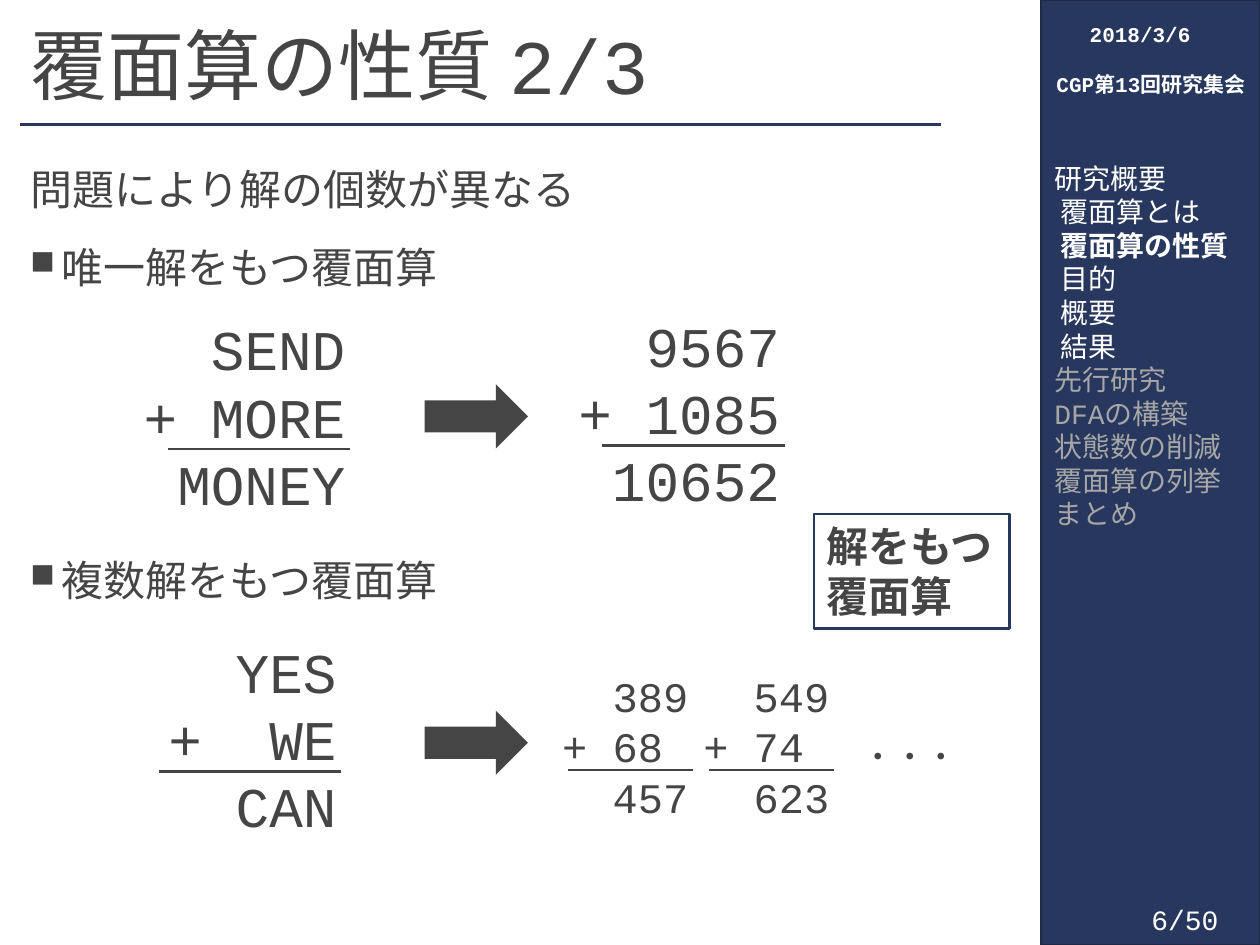
from dataclasses import dataclass
from typing import NamedTuple

from lxml.etree import SubElement
from pptx import Presentation
from pptx.dml.color import RGBColor
from pptx.enum.shapes import MSO_CONNECTOR as CONN, MSO_SHAPE as SHAPE
from pptx.enum.text import MSO_ANCHOR as ANCHOR, PP_ALIGN as ALIGN
from pptx.oxml.ns import qn
from pptx.util import Inches, Pt

COLS, ROWS = 100, 75


@dataclass(frozen=True)
class Theme:
    font: str = "Courier New"
    ink: str = "454545"
    navy: str = "27375D"
    edge: str = "1D2945"
    white: str = "FFFFFF"
    faded: str = "A6A6A6"
    title: int = 44
    large: int = 32
    body: int = 24
    dots: int = 18
    menu: int = 16
    small: int = 12
    rule: float = 1.5


T = Theme()


class Box(NamedTuple):
    col: float
    row: float
    cols: float
    rows: float


class Rule(NamedTuple):
    dx: float
    dy: float
    length: float


@dataclass(frozen=True)
class Sum:
    col: float
    row: float
    size: int
    lines: tuple[str, str, str]


@dataclass(frozen=True)
class Item:
    text: str
    bold: bool = False
    color: str = T.white


@dataclass(frozen=True)
class Point:
    text: str
    before: float = 10
    bullet: bool = True


SUM_RULES = {T.large: Rule(3.4, 11.15, 14.5), T.body: Rule(8, 8.4, 9.9)}
SUM_HEIGHTS = {T.large: 17.2, T.body: 13.1}
SUMS = [
    Sum(9.9, 24.5, T.large, ("SEND", "+ MORE", "MONEY")),
    Sum(44.4, 24.2, T.large, ("9567", "+ 1085", "10652")),
    Sum(9.2, 50.1, T.large, ("YES", "+  WE", "CAN")),
    Sum(37.1, 52.7, T.body, ("389", "+ 68 ", "457")),
    Sum(48.3, 52.7, T.body, ("549", "+ 74 ", "623")),
]
ARROW_ROWS = (30.5, 56.4)
POINTS = [
    Point("問題により解の個数が異なる", bullet=False),
    Point("唯一解をもつ覆面算"),
    Point("複数解をもつ覆面算", before=144),
]
MENU = [
    Item("研究概要"),
    Item(" 覆面算とは"),
    Item(" 覆面算の性質", bold=True),
    Item(" 目的"),
    Item(" 概要"),
    Item(" 結果"),
    *(Item(t, color=T.faded) for t in
      ("先行研究", "DFAの構築", "状態数の削減", "覆面算の列挙", "まとめ")),
]

prs = Presentation()
prs.slide_width, prs.slide_height = Inches(10), Inches(7.5)
s = prs.slides.add_slide(prs.slide_layouts[6])


def x(cols: float) -> int:
    return round(prs.slide_width * cols / COLS)


def y(rows: float) -> int:
    return round(prs.slide_height * rows / ROWS)


def place(box: Box) -> tuple[int, int, int, int]:
    return x(box.col), y(box.row), x(box.cols), y(box.rows)


def write(p, text: str, *, size: int, color: str = T.ink, bold: bool = False,
          align=ALIGN.LEFT, spacing: float | None = None, before: float = 0) -> None:
    p.alignment, p.space_before = align, Pt(before)
    if spacing:
        p.line_spacing = spacing
    r = p.add_run()
    r.text = text
    r.font.name, r.font.size, r.font.bold = T.font, Pt(size), bold
    r.font.color.rgb = RGBColor.from_string(color)


def paragraphs(tf, count: int) -> list:
    return [tf.paragraphs[0], *(tf.add_paragraph() for _ in range(count - 1))]


def text_box(box: Box, *lines: str, anchor=ANCHOR.TOP, wrap: bool = True, **fmt):
    tf = s.shapes.add_textbox(*place(box)).text_frame
    tf.word_wrap, tf.vertical_anchor = wrap, anchor
    for p, line in zip(paragraphs(tf, len(lines)), lines):
        write(p, line, **fmt)
    return tf


def shape(kind, box: Box, fill: str | None = None, line: str | None = None,
          width: float = T.rule):
    sp = s.shapes.add_shape(kind, *place(box))
    sp.shadow.inherit = False
    if fill:
        sp.fill.solid()
        sp.fill.fore_color.rgb = RGBColor.from_string(fill)
    else:
        sp.fill.background()
    if line:
        sp.line.color.rgb = RGBColor.from_string(line)
        sp.line.width = Pt(width)
    else:
        sp.line.fill.background()
    return sp


def rule(col: float, row: float, length: float, color: str = T.ink) -> None:
    c = s.shapes.add_connector(CONN.STRAIGHT, x(col), y(row), x(col + length), y(row))
    c.line.color.rgb = RGBColor.from_string(color)
    c.line.width = Pt(T.rule)
    SubElement(c._element.spPr, qn("a:effectLst"))


def add_bullet(p) -> None:
    pPr = p._p.get_or_add_pPr()
    pPr.set("marL", str(Inches(0.25)))
    pPr.set("indent", str(-Inches(0.25)))
    SubElement(pPr, qn("a:buSzPct")).set("val", "80000")
    SubElement(pPr, qn("a:buChar")).set("char", "■")


def draw_points(box: Box, points: list[Point]) -> None:
    tf = s.shapes.add_textbox(*place(box)).text_frame
    tf.word_wrap = True
    for p, point in zip(paragraphs(tf, len(points)), points):
        write(p, point.text, size=T.body, spacing=1.2, before=point.before)
        if point.bullet:
            add_bullet(p)


def draw_sum(item: Sum) -> None:
    text_box(Box(item.col, item.row, 18.5, SUM_HEIGHTS[item.size]), *item.lines,
             size=item.size, align=ALIGN.RIGHT)
    line = SUM_RULES[item.size]
    rule(item.col + line.dx, item.row + line.dy, line.length)


def draw_menu(box: Box, items: list[Item]) -> None:
    tf = s.shapes.add_textbox(*place(box)).text_frame
    tf.word_wrap = True
    for p, item in zip(paragraphs(tf, len(items)), items):
        write(p, item.text, size=T.menu, color=item.color, bold=item.bold)


def draw_label(box: Box, *lines: str) -> None:
    tf = shape(SHAPE.RECTANGLE, box, line=T.navy).text_frame
    tf.word_wrap, tf.vertical_anchor = False, ANCHOR.TOP
    for p, line in zip(paragraphs(tf, len(lines)), lines):
        write(p, line, size=T.body, bold=True)


rule(1.6, 9.9, 73.1, T.navy)
shape(SHAPE.RECTANGLE, Box(82.6, 0, 17.4, ROWS), T.navy, T.edge, 1)
text_box(Box(1.4, 1.2, 81.2, 8.7), "覆面算の性質 2/3", size=T.title, spacing=0.9,
         anchor=ANCHOR.MIDDLE)
draw_points(Box(1.4, 11.7, 81.2, 59.3), POINTS)

heading = dict(size=T.small, color=T.white, bold=True, anchor=ANCHOR.MIDDLE)
text_box(Box(85.5, 0.7, 11.5, 4), "2018/3/6", **heading)
text_box(Box(82.7, 4.7, 17.3, 4), "CGP第13回研究集会", align=ALIGN.CENTER, **heading)

for item in SUMS:
    draw_sum(item)
for row in ARROW_ROWS:
    shape(SHAPE.RIGHT_ARROW, Box(33.7, row, 8.2, 5.1), T.ink)
text_box(Box(67.5, 58, 9.6, 4), "・・・", size=T.dots, wrap=False)
draw_label(Box(64.6, 40.8, 15.5, 9.1), "解をもつ", "覆面算")
draw_menu(Box(82.7, 12.3, 16.8, 30.6), MENU)
page = text_box(Box(77.5, 71, 21.2, 4), "6/50", size=T.menu, color=T.white,
                align=ALIGN.RIGHT, anchor=ANCHOR.MIDDLE)
page.margin_right = Inches(0.2)

prs.save("out.pptx")
